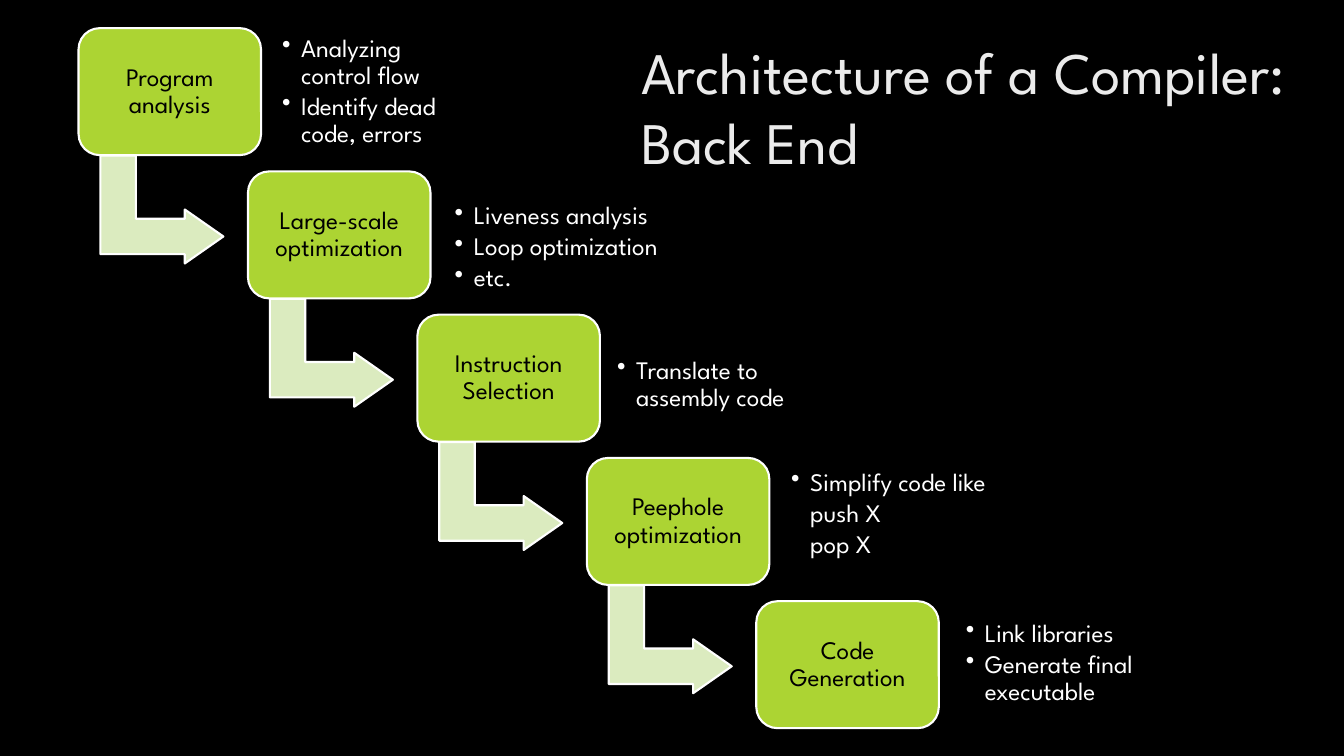
import dataclasses

import lxml.etree
import pptx
import pptx.dml.color
import pptx.enum.shapes
import pptx.enum.text
import pptx.oxml.ns
import pptx.presentation
import pptx.shapes.autoshape
import pptx.slide
import pptx.text.text
import pptx.util

Cm = pptx.util.Cm
Shapes = pptx.enum.shapes.MSO_SHAPE
Align = pptx.enum.text.PP_ALIGN
Anchor = pptx.enum.text.MSO_ANCHOR

FONT = "League Spartan"
COLOURS = {
    "background": "000000",
    "title": "EBEBEB",
    "box": "ACD433",
    "box text": "000000",
    "arrow": "DBEBBF",
    "outline": "FFFFFF",
    "list text": "FFFFFF",
}
BOX_LEFT, BOX_TOP = 1.98, 0.71
BOX_WIDTH, BOX_HEIGHT = 4.6, 3.2
STEP_RIGHT, STEP_DOWN = 4.27, 3.61
ARROW_RIGHT, ARROW_DOWN = 0.74, 3.02
ARROW_WIDTH, ARROW_HEIGHT = 2.72, 3.1
LIST_HEIGHT = 2.59
INDENT = 0.48
INSET = 0.18


@dataclasses.dataclass(frozen=True)
class ListItem:
    text: str
    level: int = 1


@dataclasses.dataclass(frozen=True)
class Stage:
    name: str
    list_left: float
    list_top: float
    list_width: float
    items: tuple[ListItem, ...]


STAGES = (
    Stage("Program analysis", 6.93, 1.02, 5.26,
          (ListItem("Analyzing control flow"), ListItem("Identify dead code, errors"))),
    Stage("Large-scale optimization", 11.28, 4.95, 7.29,
          (ListItem("Liveness analysis"), ListItem("Loop optimization"), ListItem("etc."))),
    Stage("Instruction Selection", 15.37, 8.41, 5.94,
          (ListItem("Translate to assembly code"),)),
    Stage("Peephole optimization", 19.76, 11.66, 7.49,
          (ListItem("Simplify code like"), ListItem("push X", 2), ListItem("pop X", 2))),
    Stage("Code Generation", 24.16, 15.42, 5.54,
          (ListItem("Link libraries"), ListItem("Generate final executable"))),
)


def colour(name: str) -> pptx.dml.color.RGBColor:
    return pptx.dml.color.RGBColor.from_string(COLOURS[name])


def write_text(paragraph: pptx.text.text._Paragraph, text: str, *, colour_name: str,
               size: float = 18, align: Align = Align.LEFT,
               line_spacing: float = 0.9, space_after: float = 0) -> None:
    paragraph.alignment = align
    paragraph.line_spacing = line_spacing
    paragraph.space_after = pptx.util.Pt(space_after)
    run = paragraph.add_run()
    run.text = text
    run.font.name = FONT
    run.font.size = pptx.util.Pt(size)
    run.font.color.rgb = colour(colour_name)


def set_frame(frame: pptx.text.text.TextFrame) -> None:
    frame.word_wrap = True
    frame.vertical_anchor = Anchor.MIDDLE
    frame.margin_left = frame.margin_right = Cm(INSET)
    frame.margin_top = frame.margin_bottom = Cm(INSET)


def add_filled_shape(slide: pptx.slide.Slide, kind: Shapes, left: float, top: float,
                     width: float, height: float, fill: str,
                     adjustments: tuple[float, ...]) -> pptx.shapes.autoshape.Shape:
    shape = slide.shapes.add_shape(kind, Cm(left), Cm(top), Cm(width), Cm(height))
    shape.shadow.inherit = False
    shape.fill.solid()
    shape.fill.fore_color.rgb = colour(fill)
    shape.line.color.rgb = colour("outline")
    shape.line.width = pptx.util.Pt(1.5)
    for index, value in enumerate(adjustments):
        shape.adjustments[index] = value
    return shape


def add_title(slide: pptx.slide.Slide) -> None:
    title = slide.shapes.title
    title.left, title.top = Cm(15.9), Cm(0.76)
    title.width, title.height = Cm(17.48), Cm(5.31)
    title.text_frame.word_wrap = True
    title.text_frame.auto_size = pptx.enum.text.MSO_AUTO_SIZE.NONE
    title.text_frame.vertical_anchor = Anchor.TOP
    write_text(title.text_frame.paragraphs[0], "Architecture of a Compiler: Back End",
               colour_name="title", size=42, line_spacing=1)


def add_arrow(slide: pptx.slide.Slide, box_left: float, box_top: float) -> None:
    arrow = add_filled_shape(slide, Shapes.BENT_UP_ARROW, box_left + ARROW_RIGHT,
                             box_top + ARROW_DOWN, ARROW_WIDTH, ARROW_HEIGHT,
                             "arrow", (0.328, 0.25, 0.358))
    arrow.rotation = 90


def add_box(slide: pptx.slide.Slide, name: str, left: float, top: float) -> None:
    box = add_filled_shape(slide, Shapes.ROUNDED_RECTANGLE, left, top,
                           BOX_WIDTH, BOX_HEIGHT, "box", (0.167,))
    set_frame(box.text_frame)
    write_text(box.text_frame.paragraphs[0], name, colour_name="box text",
               align=Align.CENTER, space_after=6.3)


def add_list(slide: pptx.slide.Slide, stage: Stage) -> None:
    text_box = slide.shapes.add_textbox(Cm(stage.list_left), Cm(stage.list_top),
                                        Cm(stage.list_width), Cm(LIST_HEIGHT))
    frame = text_box.text_frame
    set_frame(frame)
    for index, item in enumerate(stage.items):
        paragraph = frame.add_paragraph() if index else frame.paragraphs[0]
        paragraph.level = item.level
        properties = paragraph._p.get_or_add_pPr()
        properties.set("marL", str(Cm(INDENT * item.level)))
        properties.set("indent", str(-Cm(INDENT)))
        if item.level == 1:
            bullet = lxml.etree.SubElement(properties, pptx.oxml.ns.qn("a:buChar"))
            bullet.set("char", "•")
        write_text(paragraph, item.text, colour_name="list text", space_after=2.7)


def main() -> None:
    presentation = pptx.Presentation()
    presentation.slide_width, presentation.slide_height = Cm(33.87), Cm(19.05)
    slide = presentation.slides.add_slide(presentation.slide_layouts[5])
    slide.background.fill.solid()
    slide.background.fill.fore_color.rgb = colour("background")
    add_title(slide)
    for index, stage in enumerate(STAGES):
        left = BOX_LEFT + index * STEP_RIGHT
        top = BOX_TOP + index * STEP_DOWN
        if index < len(STAGES) - 1:
            add_arrow(slide, left, top)
        add_box(slide, stage.name, left, top)
        add_list(slide, stage)
    presentation.save("out.pptx")


if __name__ == "__main__":
    main()
